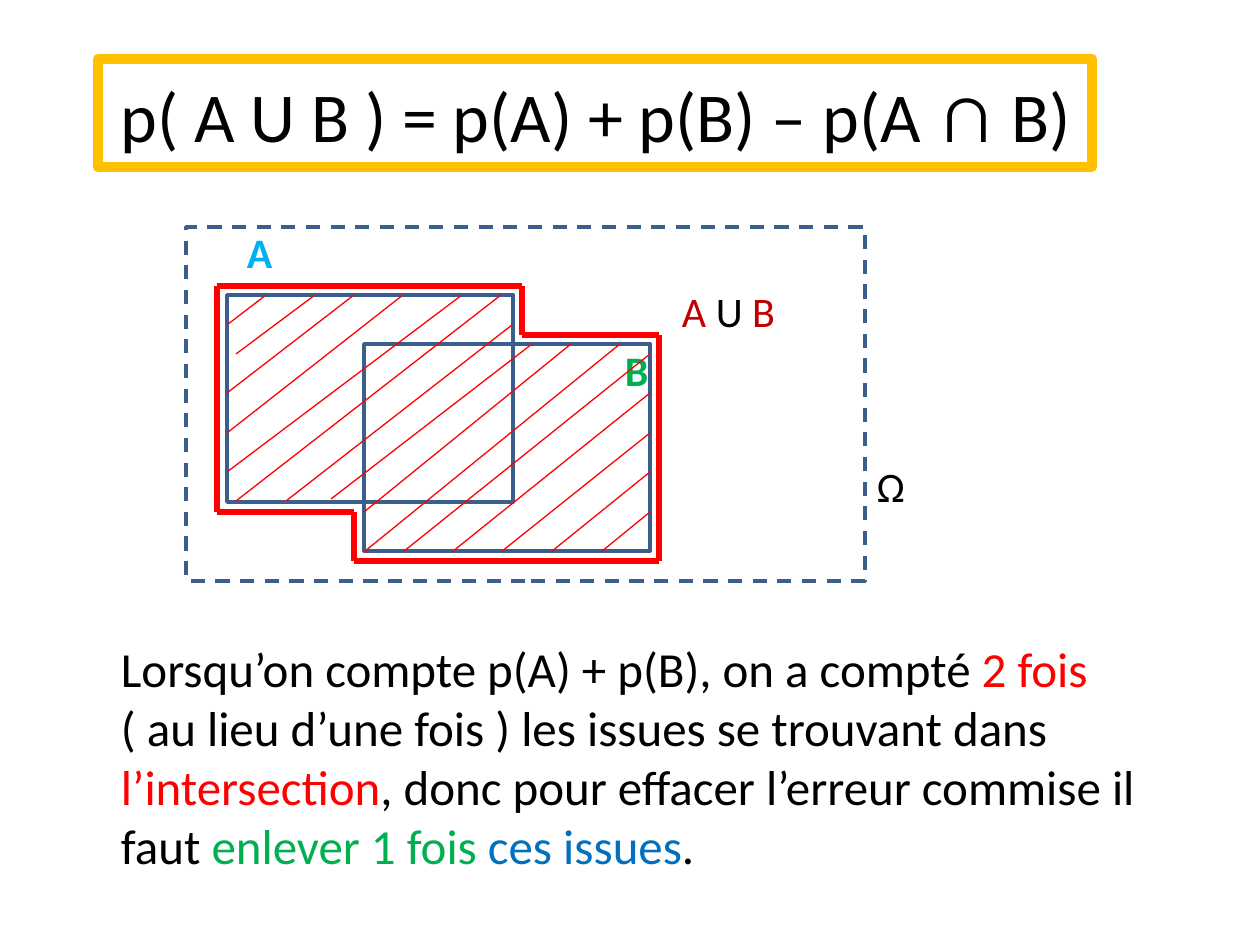
from itertools import pairwise

from lxml import etree
from pptx import Presentation
from pptx.dml.color import RGBColor
from pptx.enum.dml import MSO_LINE
from pptx.enum.shapes import MSO_CONNECTOR, MSO_SHAPE
from pptx.oxml.ns import qn
from pptx.util import Pt

PX = 914400 // 126  # EMU in one px
FONT = "Calibri"
RECTANGLE, STRAIGHT, DASH = MSO_SHAPE.RECTANGLE, MSO_CONNECTOR.STRAIGHT, MSO_LINE.DASH
COLORS = {
    "black": "000000", "red": "FF0000", "dark red": "C00000", "green": "00B050",
    "sky": "00B0F0", "blue": "0070C0", "steel": "3A5F8C", "gold": "FFC000",
}

# Diagram coordinates, in px from the corner of the universe
EVENT_SIZE = (286, 207)
EVENT_CORNERS = [(41, 68), (178, 117)]
HATCHING = [
    (80, 68, 41, 98), (129, 68, 50, 127), (168, 68, 41, 166), (217, 68, 41, 206),
    (276, 68, 41, 245), (315, 68, 50, 274), (326, 98, 100, 274), (346, 117, 145, 272),
    (385, 117, 178, 285), (434, 117, 178, 325), (464, 127, 217, 325),
    (464, 166, 266, 325), (464, 206, 315, 325), (464, 245, 365, 325),
    (464, 285, 415, 325),
]
UNION_OUTLINE = [
    (31, 59), (336, 59), (336, 108), (473, 108), (473, 334),
    (168, 334), (168, 285), (31, 285), (31, 59),
]


def rgb(color):
    return RGBColor.from_string(COLORS[color])


def add_text(slide, box, size, lines):
    """Each line is a list of runs: (text, color, bold[, own size])."""
    frame = slide.shapes.add_textbox(*(v * PX for v in box)).text_frame
    frame.word_wrap = True
    frame.margin_left = frame.margin_right = frame.margin_top = frame.margin_bottom = 0
    paragraph = frame.paragraphs[0]
    for number, runs in enumerate(lines):
        if number:
            paragraph.add_line_break()
        for text, color, bold, *own_size in runs:
            run = paragraph.add_run()
            run.text = text
            run.font.name = FONT
            run.font.size = Pt(own_size[0] if own_size else size)
            run.font.bold = bold
            run.font.color.rgb = rgb(color)


def add_frame(slide, box, color, width, dash=None):
    frame = slide.shapes.add_shape(RECTANGLE, *(v * PX for v in box))
    frame.shadow.inherit = False
    frame.fill.background()
    frame.line.color.rgb = rgb(color)
    frame.line.width = Pt(width)
    if dash:
        frame.line.dash_style = dash


def add_line(slide, ends, color, width):
    line = slide.shapes.add_connector(STRAIGHT, *(v * PX for v in ends))
    line.line.color.rgb = rgb(color)
    line.line.width = Pt(width)
    etree.SubElement(line._element.spPr, qn("a:effectLst"))


def add_formula(slide, left, top, width, height):
    add_text(slide, (left + 23, top, width, height), 40, [[
        ("p( A U B ) = p(A) + p(B) – p(A ", "black", False),
        ("∩", "black", False, 48),
        (" B)", "black", False),
    ]])
    add_frame(slide, (left, top, width, height), "gold", 6)


def add_venn_diagram(slide, left, top, width, height):
    # Labels
    labels = [
        (61, 0, [("A", "sky", True)]),
        (496, 59, [("A ", "dark red", False), ("U", "black", False),
                   (" B", "dark red", False)]),
        (439, 118, [("B", "green", True)]),
        (691, 234, [("Ω", "black", False)]),
    ]
    for x, y, runs in labels:
        add_text(slide, (left + x, top + y, 120, 51), 24, [runs])

    # Universe and the two events
    add_frame(slide, (left, top, width, height), "steel", 2, DASH)
    for x, y in EVENT_CORNERS:
        add_frame(slide, (left + x, top + y, *EVENT_SIZE), "steel", 2)

    # Hatching, then the outline of the union
    outline = [(*start, *end) for start, end in pairwise(UNION_OUTLINE)]
    for segments, weight in ((HATCHING, 0.75), (outline, 3)):
        for x1, y1, x2, y2 in segments:
            add_line(slide, (left + x1, top + y1, left + x2, top + y2), "red", weight)


def add_explanation(slide, left, top, width, height):
    add_text(slide, (left, top, width, height), 28, [
        [("Lorsqu’on compte p(A) + p(B), on a compté ", "black", False),
         ("2 fois", "red", False)],
        [("( au lieu d’une fois ) les issues se trouvant dans ", "black", False),
         ("l’intersection", "red", False),
         (", donc pour effacer l’erreur commise il faut ", "black", False),
         ("enlever 1 fois ", "green", False),
         ("ces issues", "blue", False),
         (".", "black", False)],
    ])


def main():
    deck = Presentation()
    deck.slide_width, deck.slide_height = 1260 * PX, 945 * PX
    slide = deck.slides.add_slide(deck.slide_layouts[6])
    add_formula(slide, 98, 59, 994, 108)
    add_venn_diagram(slide, 186, 227, 679, 354)
    add_explanation(slide, 121, 639, 1048, 240)
    deck.save("out.pptx")


if __name__ == "__main__":
    main()
